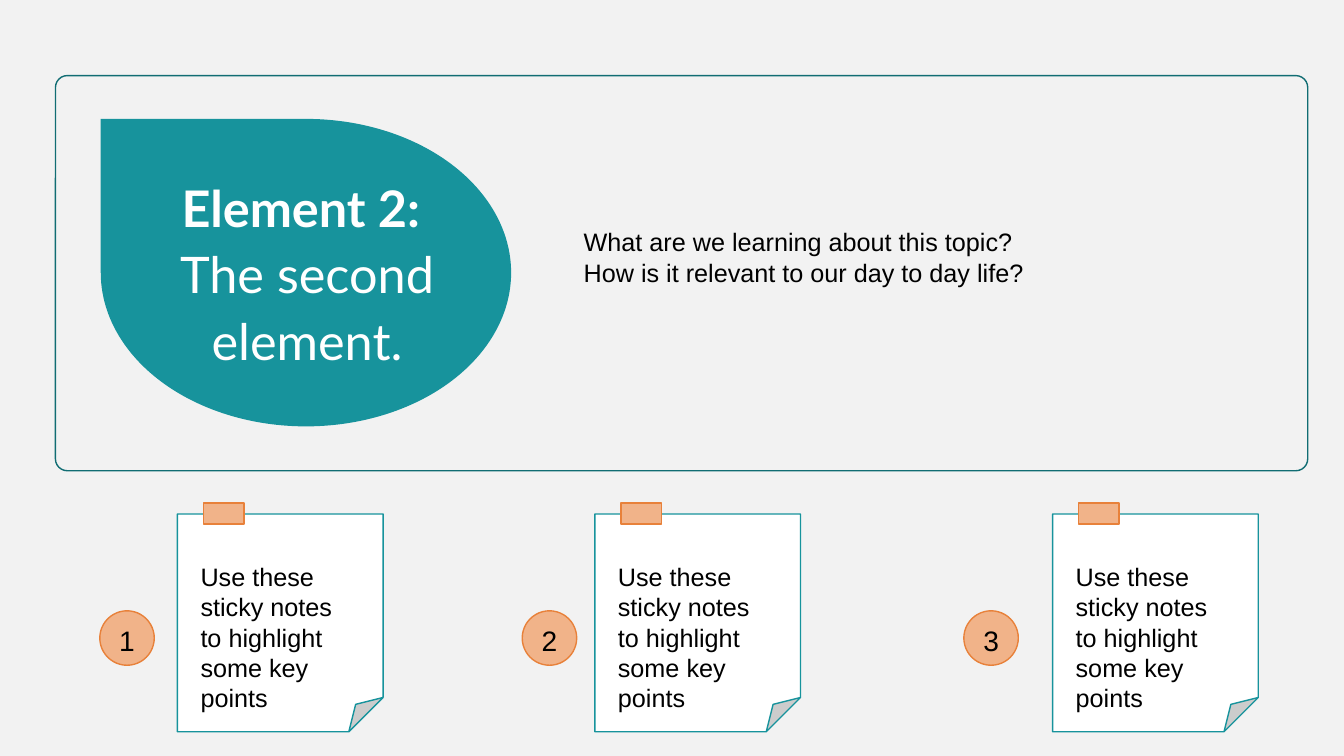
from pptx import Presentation
from pptx.dml.color import RGBColor
from pptx.enum.shapes import MSO_SHAPE
from pptx.enum.text import MSO_ANCHOR, MSO_AUTO_SIZE, PP_ALIGN
from pptx.util import Pt

PX = 9144
PALE = RGBColor(0xF2, 0xF2, 0xF2)
WHITE = RGBColor(0xFF, 0xFF, 0xFF)
BLACK = RGBColor(0x00, 0x00, 0x00)
TEAL = RGBColor(0x17, 0x93, 0x9C)
DARK = RGBColor(0x11, 0x6D, 0x73)
PEACH = RGBColor(0xF1, 0xB3, 0x89)
ORANGE = RGBColor(0xE8, 0x81, 0x3A)

ROUND = MSO_SHAPE.ROUNDED_RECTANGLE
TEAR = MSO_SHAPE.TEAR
FOLD = MSO_SHAPE.FOLDED_CORNER
RECT = MSO_SHAPE.RECTANGLE
OVAL = MSO_SHAPE.OVAL
LEFT = PP_ALIGN.LEFT
MID = PP_ALIGN.CENTER
TOP = MSO_ANCHOR.TOP
GROW = MSO_AUTO_SIZE.SHAPE_TO_FIT_TEXT


def px(*nums):
    return [num * PX for num in nums]


def write(frame, text, size=18, font="Arial", color=BLACK, align=LEFT,
          lead=None, heads=0):
    for i, line in enumerate(text.split("\n")):
        para = frame.paragraphs[0] if i == 0 else frame.add_paragraph()
        para.alignment = align
        if lead:
            para.line_spacing = Pt(lead)
        run = para.add_run()
        run.text = line
        run.font.size = Pt(size)
        run.font.name = font
        run.font.color.rgb = color
        run.font.bold = i < heads


class Deck:
    def __init__(self, wide, high):
        self.show = Presentation()
        self.show.slide_width, self.show.slide_height = px(wide, high)
        self.slide = self.show.slides.add_slide(self.show.slide_layouts[6])
        back = self.slide.background.fill
        back.solid()
        back.fore_color.rgb = PALE
        self.host = self.slide.shapes

    def group(self):
        self.host = self.slide.shapes.add_group_shape().shapes

    def shape(self, kind, box, fill=None, line=None):
        item = self.host.add_shape(kind, *px(*box))
        item.shadow.inherit = False
        if fill is None:
            item.fill.background()
        else:
            item.fill.solid()
            item.fill.fore_color.rgb = fill
        if line is None:
            item.line.fill.background()
        else:
            item.line.color.rgb = line
            item.line.width = Pt(1)
        return item

    def text(self, box, text, inset=(10, 5), **form):
        frame = self.host.add_textbox(*px(*box)).text_frame
        frame.word_wrap = True
        frame.auto_size = GROW
        frame.vertical_anchor = TOP
        side, edge = px(*inset)
        frame.margin_left = frame.margin_right = side
        frame.margin_top = frame.margin_bottom = edge
        write(frame, text, **form)

    def panel(self):
        frame = self.shape(ROUND, (55, 75, 1242, 392), line=DARK)
        frame.adjustments[0] = 0.03
        drop = self.shape(TEAR, (100, 118, 407, 305), TEAL)
        drop.element.spPr.get_or_add_xfrm().set("flipH", "1")
        self.text((154, 169, 301, 202), "Element 2: \nThe second element.",
                  inset=(0, 0), size=36, font="Lato", color=WHITE,
                  align=MID, lead=47.7, heads=1)
        self.text((569, 220, 679, 71),
                  "What are we learning about this topic?\n"
                  "How is it relevant to our day to day life?")

    def note(self, x):
        self.group()
        self.shape(FOLD, (x, 510, 204, 216), WHITE, TEAL)
        self.text((x + 13, 552, 178, 162),
                  "Use these sticky notes to highlight some key points")
        self.shape(RECT, (x + 26, 499, 40, 21), PEACH, ORANGE)

    def badge(self, x, label):
        self.group()
        self.shape(OVAL, (x, 606, 54, 54), PEACH, ORANGE)
        self.text((x + 11, 613, 32, 38), label, inset=(0, 0), size=20.1,
                  align=MID, lead=28.1)


def main():
    deck = Deck(1333, 750)
    deck.panel()
    for x in (176, 590, 1044):
        deck.note(x)
    for i, x in enumerate((99, 518, 956), 1):
        deck.badge(x, str(i))
    deck.show.save("out.pptx")


if __name__ == "__main__":
    main()
